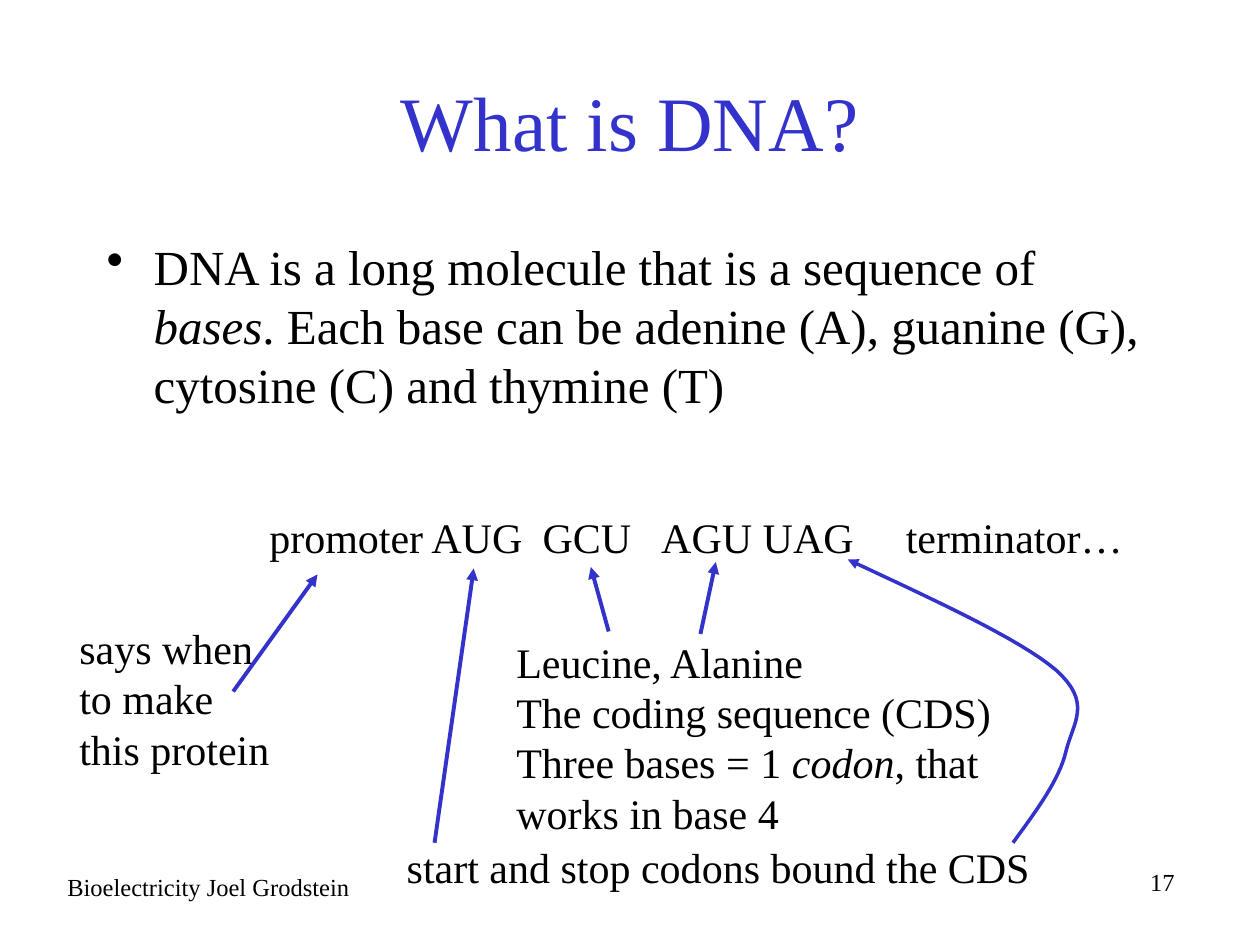
from lxml import etree
from pptx import Presentation
from pptx.dml.color import RGBColor
from pptx.enum.shapes import MSO_CONNECTOR
from pptx.enum.text import MSO_ANCHOR, PP_ALIGN
from pptx.oxml.ns import qn
from pptx.util import Cm, Pt

BLUE = RGBColor(0x33, 0x33, 0xCC)
BLACK = RGBColor(0, 0, 0)
FONT = "Times New Roman"
STRAIGHT = MSO_CONNECTOR.STRAIGHT
LEFT, CENTER, RIGHT = PP_ALIGN.LEFT, PP_ALIGN.CENTER, PP_ALIGN.RIGHT
TOP, MIDDLE = MSO_ANCHOR.TOP, MSO_ANCHOR.MIDDLE
CURVE_STEPS = 16


def add_text(slide, box, paragraphs, size=24, color=BLACK, align=LEFT, anchor=TOP):
    frame = slide.shapes.add_textbox(*(Cm(v) for v in box)).text_frame
    frame.word_wrap = True
    frame.vertical_anchor = anchor
    frame.text = "\n".join(paragraphs)
    for paragraph in frame.paragraphs:
        paragraph.alignment = align
        for run in paragraph.runs:
            style_run(run, size, color)
    return frame


def style_run(run, size, color, italic=False):
    run.font.name = FONT
    run.font.size = Pt(size)
    run.font.color.rgb = color
    run.font.italic = italic


def italicize(paragraph, term, size):
    before, after = paragraph.text.split(term)
    paragraph.text = before
    for text in (term, after):
        paragraph.add_run().text = text
    for run in paragraph.runs:
        style_run(run, size, BLACK, run.text == term)


def add_bullet(paragraph, indent):
    properties = paragraph._p.get_or_add_pPr()
    properties.set("marL", str(Cm(indent)))
    properties.set("indent", str(-Cm(indent)))
    etree.SubElement(properties, qn("a:buChar"), char="•")


def add_tab_stops(paragraph, stops):
    tabs = etree.SubElement(paragraph._p.get_or_add_pPr(), qn("a:tabLst"))
    for stop in stops:
        etree.SubElement(tabs, qn("a:tab"), pos=str(Cm(stop)), algn="l")


def style_arrow(arrow, width):
    arrow.line.color.rgb = BLUE
    arrow.line.width = Pt(width)
    etree.SubElement(arrow.line._get_or_add_ln(), qn("a:tailEnd"), type="triangle")


def add_arrow(slide, start, end):
    arrow = slide.shapes.add_connector(STRAIGHT, *(Cm(v) for v in start + end))
    style_arrow(arrow, 2.25)
    etree.SubElement(arrow._element.spPr, qn("a:effectLst"))


def bezier_point(controls, t):
    weights = ((1 - t) ** 3, 3 * t * (1 - t) ** 2, 3 * t ** 2 * (1 - t), t ** 3)
    return tuple(
        Cm(sum(w * point[axis] for w, point in zip(weights, controls)))
        for axis in (0, 1)
    )


def add_curved_arrow(slide, controls):
    points = [
        bezier_point(controls[first:first + 4], step / CURVE_STEPS)
        for first in range(0, len(controls) - 1, 3)
        for step in range(1, CURVE_STEPS + 1)
    ]
    builder = slide.shapes.build_freeform(Cm(controls[0][0]), Cm(controls[0][1]))
    builder.add_line_segments(points, close=False)
    curve = builder.convert_to_shape()
    curve.fill.background()
    curve.shadow.inherit = False
    style_arrow(curve, 2)


def main():
    presentation = Presentation()
    presentation.slide_width = Cm(25.4)
    presentation.slide_height = Cm(19.05)
    slide = presentation.slides.add_slide(presentation.slide_layouts[6])

    add_text(slide, (15.88, 17.35, 8.05, 1.27), ["17"], 14, align=RIGHT)
    add_text(slide, (1.9, 0.84, 21.6, 3.18), ["What is DNA?"], 44, BLUE, CENTER, MIDDLE)

    definition = add_text(slide, (1.9, 4.65, 21.6, 4.29), [
        "DNA is a long molecule that is a sequence of bases. Each base can be "
        "adenine (A), guanine (G), cytosine (C) and thymine (T)"
    ], 28).paragraphs[0]
    italicize(definition, "bases", 28)
    definition.space_before = Pt(5.6)
    add_bullet(definition, 0.95)

    add_text(slide, (0.18, 17.45, 8.05, 1.27), ["Bioelectricity Joel Grodstein"], 14, align=CENTER)

    sequence = add_text(slide, (5.18, 10.19, 19.56, 1.27),
                        ["promoter AUG\tGCU\tAGU UAG\tterminator…"])
    add_tab_stops(sequence.paragraphs[0], (5.51, 7.9, 12.83))

    add_text(slide, (7.95, 16.84, 14.48, 1.27), ["start and stop codons bound the CDS"])

    coding = add_text(slide, (10.16, 12.7, 11.38, 4.37), [
        "Leucine, Alanine",
        "The coding sequence (CDS)",
        "Three bases = 1 codon, that works in base 4",
    ])
    italicize(coding.paragraphs[2], "codon", 24)

    add_text(slide, (1.35, 12.42, 4.57, 3.33), ["says when to make this protein"])

    for start, end in (
        ((8.76, 16.99), (9.55, 11.46)),
        ((12.27, 12.73), (11.91, 11.43)),
        ((14.12, 12.78), (14.43, 11.33)),
        ((4.7, 13.94), (6.4, 11.58)),
    ):
        add_arrow(slide, start, end)

    add_curved_arrow(slide, (
        (20.42, 16.99), (20.88, 16.36), (21.36, 15.72), (21.49, 15.14),
        (21.64, 14.55), (22.02, 14.17), (21.29, 13.51),
        (20.55, 12.88), (18.82, 12.09), (17.09, 11.28),
    ))
    presentation.save("out.pptx")


if __name__ == "__main__":
    main()
